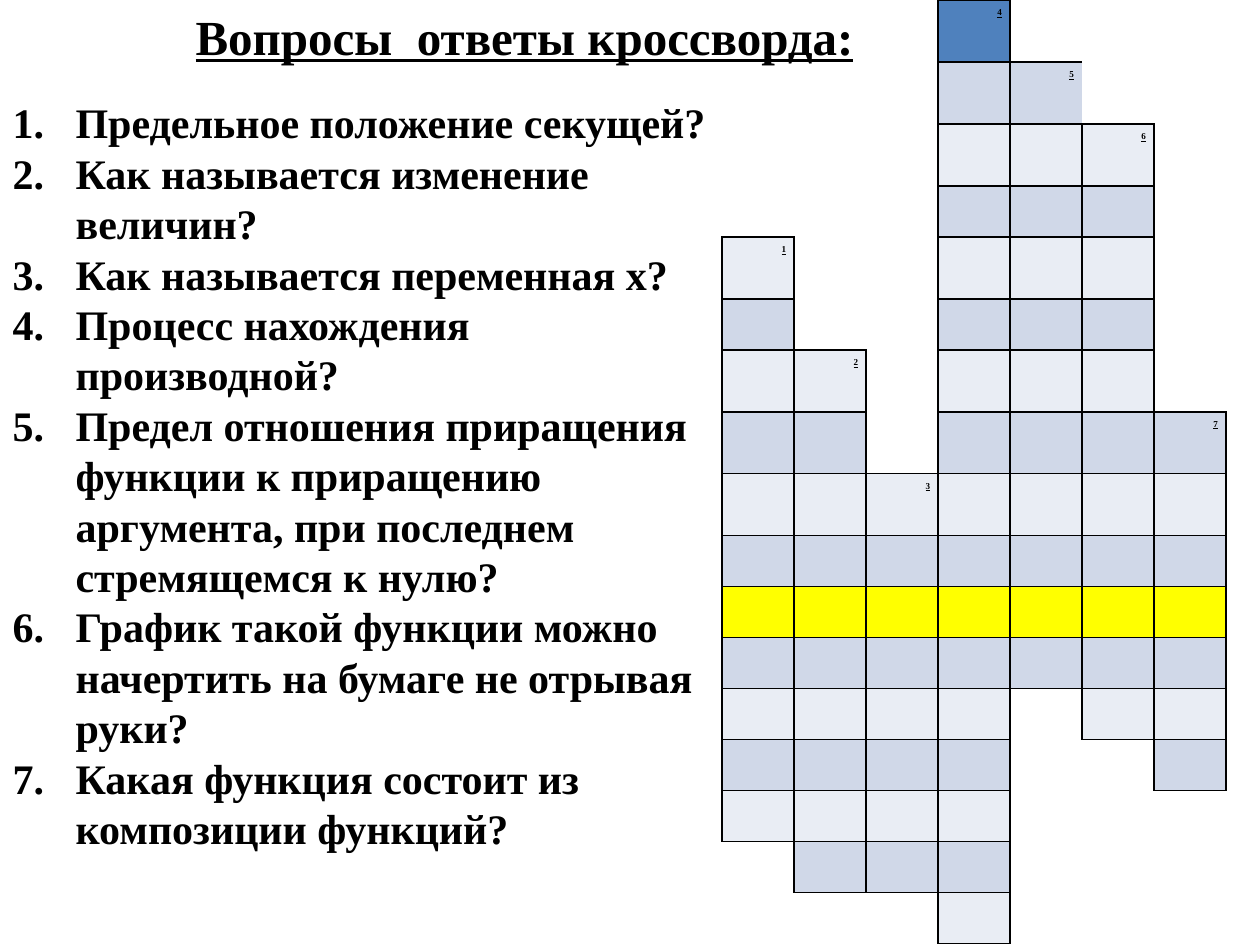
from pptx import Presentation
from pptx.dml.color import RGBColor as RGB
from pptx.enum.text import MSO_ANCHOR as Anchor, MSO_AUTO_SIZE as Fit, PP_ALIGN as Align
from pptx.oxml.ns import qn
from pptx.util import Emu, Pt
from lxml.etree import SubElement as Sub

FONT = "Times New Roman"
COLORS = {"ink": "000000", "head": "4F81BD", "dark": "D0D8E8",
          "light": "E9EDF4", "key": "FFFF00"}
TITLE = "Вопросы  ответы кроссворда:"
ASKS = [
    "Предельное положение секущей?",
    "Как называется изменение величин?",
    "Как называется переменная х?",
    "Процесс нахождения производной?",
    "Предел отношения приращения функции к приращению аргумента, "
    "при последнем стремящемся к нулю?",
    "График такой функции можно начертить на бумаге не отрывая руки?",
    "Какая функция состоит из композиции функций?",
]
# First and last row of the word in each column
WORDS = [(4, 14), (6, 15), (8, 15), (0, 16), (1, 11), (2, 12), (7, 13)]
TALL = {first for first, _ in WORDS}
ROWS, KEY = 17, 10
SIDES = {"L": (0, -1), "R": (0, 1), "T": (-1, 0), "B": (1, 0)}
OPEN = {(1, 4), (1, 5)}  # pair of cells with no line between them


def px(n):
    return Emu(round(n * 914400 / 126))


def place(shape, box):
    shape.left, shape.top, shape.width, shape.height = map(px, box)


def add_run(para, text, size, line=None):
    run = para.add_run()
    run.text = text
    font = run.font
    font.name, font.size, font.bold, font.underline = FONT, Pt(size), True, line
    font.color.rgb = RGB.from_string(COLORS["ink"])
    return run


def add_title(slide, box):
    title = slide.shapes.title
    place(title, box)
    frame = title.text_frame
    frame.word_wrap, frame.auto_size = False, Fit.SHAPE_TO_FIT_TEXT
    frame.vertical_anchor = Anchor.TOP
    para = frame.paragraphs[0]
    para.alignment = Align.LEFT
    add_run(para, TITLE, 28, True)


def add_list(slide, box):
    body = slide.placeholders[1]
    place(body, box)
    frame = body.text_frame
    frame.word_wrap, frame.auto_size = True, Fit.SHAPE_TO_FIT_TEXT
    frame.vertical_anchor = Anchor.MIDDLE
    for i, ask in enumerate(ASKS):
        para = frame.add_paragraph() if i else frame.paragraphs[0]
        props = para._p.get_or_add_pPr()
        props.set("marL", str(px(63)))
        props.set("indent", str(px(-63)))
        Sub(props, qn("a:buAutoNum"), type="arabicPeriod")
        para.space_before = Pt(0)
        add_run(para, ask, 24)


def used(row, col):
    return 0 <= col < len(WORDS) and WORDS[col][0] <= row <= WORDS[col][1]


def draw_edges(cell, row, col):
    props = cell._tc.get_or_add_tcPr()
    for side, (down, right) in SIDES.items():
        near = (row + down, col + right)
        shown = (used(row, col) or used(*near)) and {(row, col), near} != OPEN
        line = Sub(props, qn("a:ln" + side), w=str(Pt(1)))
        if shown:
            fill = Sub(line, qn("a:solidFill"))
            Sub(fill, qn("a:srgbClr"), val=COLORS["ink"])
        else:
            Sub(line, qn("a:noFill"))


def shade(row):
    if row == 0:
        return "head"
    if row == KEY:
        return "key"
    return "dark" if row % 2 else "light"


def add_grid(slide, box):
    grid = slide.shapes.add_table(ROWS, len(WORDS), *map(px, box)).table
    for col in grid.columns:
        col.width = px(box[2] // len(WORDS))
    for r, row in enumerate(grid.rows):
        row.height = px(62 if r in TALL or r == 8 else 51)
        for c, cell in enumerate(row.cells):
            cell.margin_left = cell.margin_right = px(8)
            cell.margin_top = cell.margin_bottom = px(4)
            draw_edges(cell, r, c)
            if not used(r, c):
                cell.fill.background()
                continue
            cell.fill.solid()
            cell.fill.fore_color.rgb = RGB.from_string(COLORS[shade(r)])
            # Word number in the first cell
            if r == WORDS[c][0]:
                para = cell.text_frame.paragraphs[0]
                para.alignment, para.line_spacing = Align.RIGHT, 1.15
                run = add_run(para, str(c + 1), 9, True)
                run._r.get_or_add_rPr().set("baseline", "30000")


def main():
    deck = Presentation()
    deck.slide_width, deck.slide_height = px(1260), px(945)
    slide = deck.slides.add_slide(deck.slide_layouts[1])
    add_grid(slide, (722, 0, 504, 944))
    add_title(slide, (183, 0, 690, 72))
    add_list(slide, (0, 87, 728, 776))
    deck.save("out.pptx")


if __name__ == "__main__":
    main()
